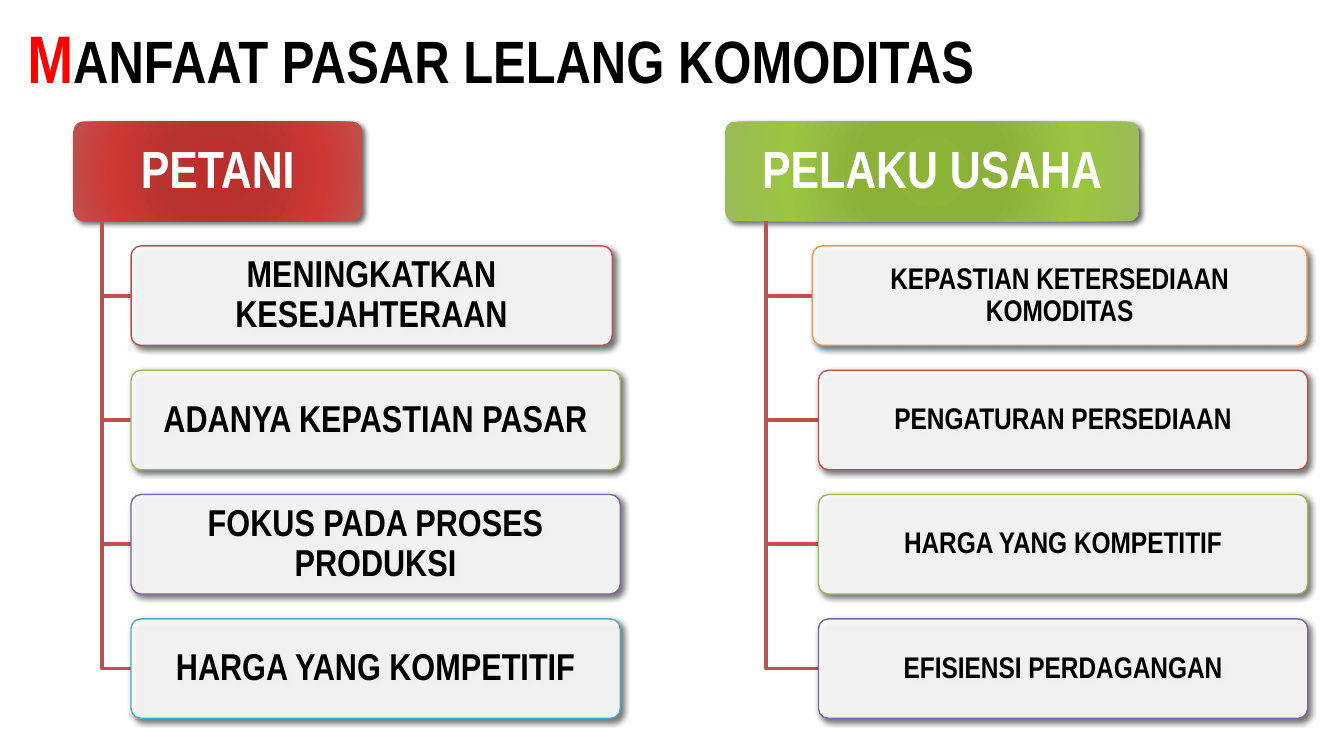
from lxml.etree import SubElement
from pptx import Presentation
from pptx.dml.color import RGBColor
from pptx.enum.shapes import MSO_SHAPE
from pptx.enum.text import MSO_ANCHOR, MSO_AUTO_SIZE, PP_ALIGN
from pptx.oxml import parse_xml
from pptx.oxml.ns import nsdecls, qn
from pptx.util import Pt

PX = 4572  # 200 px to the inch
FONT = "Arial Narrow"
BLACK = RGBColor(0x00, 0x00, 0x00)
WHITE = RGBColor(0xFF, 0xFF, 0xFF)
BRIGHT_RED = RGBColor(0xFF, 0x00, 0x00)
RED = RGBColor(0xC0, 0x50, 0x4D)
GREEN = RGBColor(0x9B, 0xBB, 0x59)
PURPLE = RGBColor(0x80, 0x64, 0xA2)
TEAL = RGBColor(0x4B, 0xAC, 0xC6)
ORANGE = RGBColor(0xF7, 0x96, 0x46)
RED_GRADIENT = [RGBColor(0xBD, 0x2D, 0x29), RGBColor(0xB8, 0x32, 0x2E),
                RGBColor(0xCD, 0x38, 0x34), RED]
GREEN_GRADIENT = [RGBColor(0x8C, 0xB5, 0x37), RGBColor(0x8B, 0xB1, 0x3B),
                  RGBColor(0x9B, 0xC5, 0x42), GREEN]
GRADIENT_STOPS = [0, 34, 70, 100]

CARD_HEIGHT = 148
CARD_PITCH = 185


def format_run(run, size, color):
    run.font.name = FONT
    run.font.size = Pt(size)
    run.font.bold = True
    run.font.color.rgb = color


def add_shadow(shape):
    shape.shadow.inherit = False
    effects = shape._element.spPr.find(qn("a:effectLst"))
    shadow = SubElement(effects, qn("a:outerShdw"), blurRad=str(Pt(3)),
                        dist=str(Pt(2)), dir="2700000", rotWithShape="0")
    color = SubElement(shadow, qn("a:srgbClr"), val="000000")
    SubElement(color, qn("a:alpha"), val="60000")


def fill_radial(shape, colors):
    """Fill the shape with a gradient that spreads from its centre."""
    stops = "".join(
        f'<a:gs pos="{stop * 1000}"><a:srgbClr val="{color}"/></a:gs>'
        for stop, color in zip(GRADIENT_STOPS, colors))
    gradient = parse_xml(
        f'<a:gradFill rotWithShape="1" {nsdecls("a")}><a:gsLst>{stops}</a:gsLst>'
        '<a:path path="circle"><a:fillToRect l="100000" t="100000" '
        'r="100000" b="100000"/></a:path></a:gradFill>')
    shape.fill.solid()
    properties = shape._element.spPr
    properties.replace(properties.find(qn("a:solidFill")), gradient)


def add_card(slide, left, top, width, text, size, color, margin):
    """Add a rounded card with centred text; its fill and line are left to the caller."""
    shape = slide.shapes.add_shape(MSO_SHAPE.ROUNDED_RECTANGLE, left * PX, top * PX,
                                   width * PX, CARD_HEIGHT * PX)
    shape.adjustments[0] = 0.1
    add_shadow(shape)
    frame = shape.text_frame
    frame.word_wrap = True
    frame.vertical_anchor = MSO_ANCHOR.MIDDLE
    frame.margin_left = frame.margin_right = margin * PX
    frame.margin_top = frame.margin_bottom = 8 * PX
    frame.text = text
    paragraph = frame.paragraphs[0]
    paragraph.alignment = PP_ALIGN.CENTER
    paragraph.line_spacing = 0.9
    format_run(paragraph.runs[0], size, color)
    return shape


def add_branch(slide, trunk, start, end, middle):
    """Draw the elbow from the header down the trunk and across to an item."""
    builder = slide.shapes.build_freeform(trunk, start, scale=PX)
    builder.add_line_segments([(trunk, middle), (end, middle)], close=False)
    branch = builder.convert_to_shape()
    branch.shadow.inherit = False
    branch.fill.background()
    branch.line.color.rgb = RED
    branch.line.width = Pt(2.08)


def add_item(slide, left, top, width, text, size, outline):
    item = add_card(slide, left, top, width, text, size, BLACK, 12)
    item.fill.solid()
    item.fill.fore_color.rgb = WHITE
    white = item._element.spPr.find(qn("a:solidFill"))[0]
    SubElement(white, qn("a:alpha"), val="90000")
    item.line.color.rgb = outline
    item.line.width = Pt(0.75)


def add_benefits(slide, left, top, header, header_width, gradient, trunk, size, items):
    """Add a header with its items; trunk and item offsets count from left."""
    card = add_card(slide, left, top, header_width, header, 28, WHITE, 16)
    fill_radial(card, gradient)
    card.line.fill.background()
    for row, (text, outline, offset, width) in enumerate(items, start=1):
        item_top = top + row * CARD_PITCH
        add_branch(slide, left + trunk, top + CARD_HEIGHT, left + offset,
                   item_top + CARD_HEIGHT // 2)
        add_item(slide, left + offset, item_top, width, text, size, outline)


def add_title(slide, left, top, width, height):
    box = slide.shapes.add_textbox(left * PX, top * PX, width * PX, height * PX)
    frame = box.text_frame
    frame.word_wrap = True
    frame.auto_size = MSO_AUTO_SIZE.SHAPE_TO_FIT_TEXT
    paragraph = frame.paragraphs[0]
    for text, size, color in [("M", 36, BRIGHT_RED),
                              ("ANFAAT PASAR LELANG KOMODITAS", 32, BLACK)]:
        run = paragraph.add_run()
        run.text = text
        format_run(run, size, color)


def main():
    presentation = Presentation()
    presentation.slide_width = 2000 * PX
    presentation.slide_height = 1125 * PX
    slide = presentation.slides.add_slide(presentation.slide_layouts[6])
    add_title(slide, 21, 14, 1874, 142)
    add_benefits(slide, 109, 181, "PETANI", 430, RED_GRADIENT, 43, 20, [
        ("MENINGKATKAN KESEJAHTERAAN", RED, 86, 716),
        ("ADANYA KEPASTIAN PASAR", GREEN, 86, 728),
        ("FOKUS PADA PROSES PRODUKSI", PURPLE, 86, 728),
        ("HARGA YANG KOMPETITIF", TEAL, 86, 728),
    ])
    add_benefits(slide, 1079, 181, "PELAKU USAHA", 616, GREEN_GRADIENT, 61, 16, [
        ("KEPASTIAN KETERSEDIAAN KOMODITAS", ORANGE, 130, 736),
        ("PENGATURAN PERSEDIAAN", RED, 139, 728),
        ("HARGA YANG KOMPETITIF", GREEN, 139, 728),
        ("EFISIENSI PERDAGANGAN", PURPLE, 139, 728),
    ])
    presentation.save("out.pptx")


if __name__ == "__main__":
    main()
